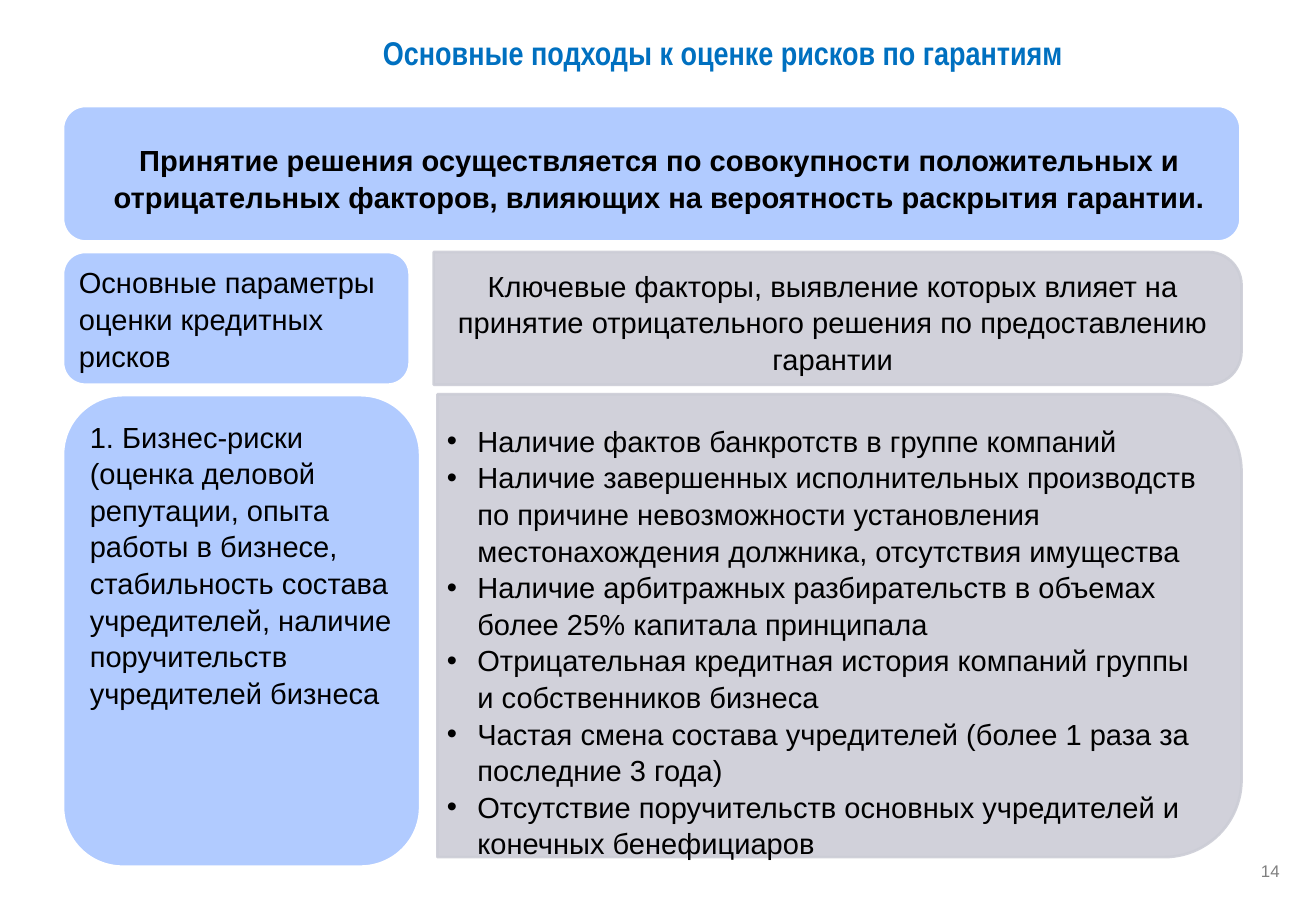
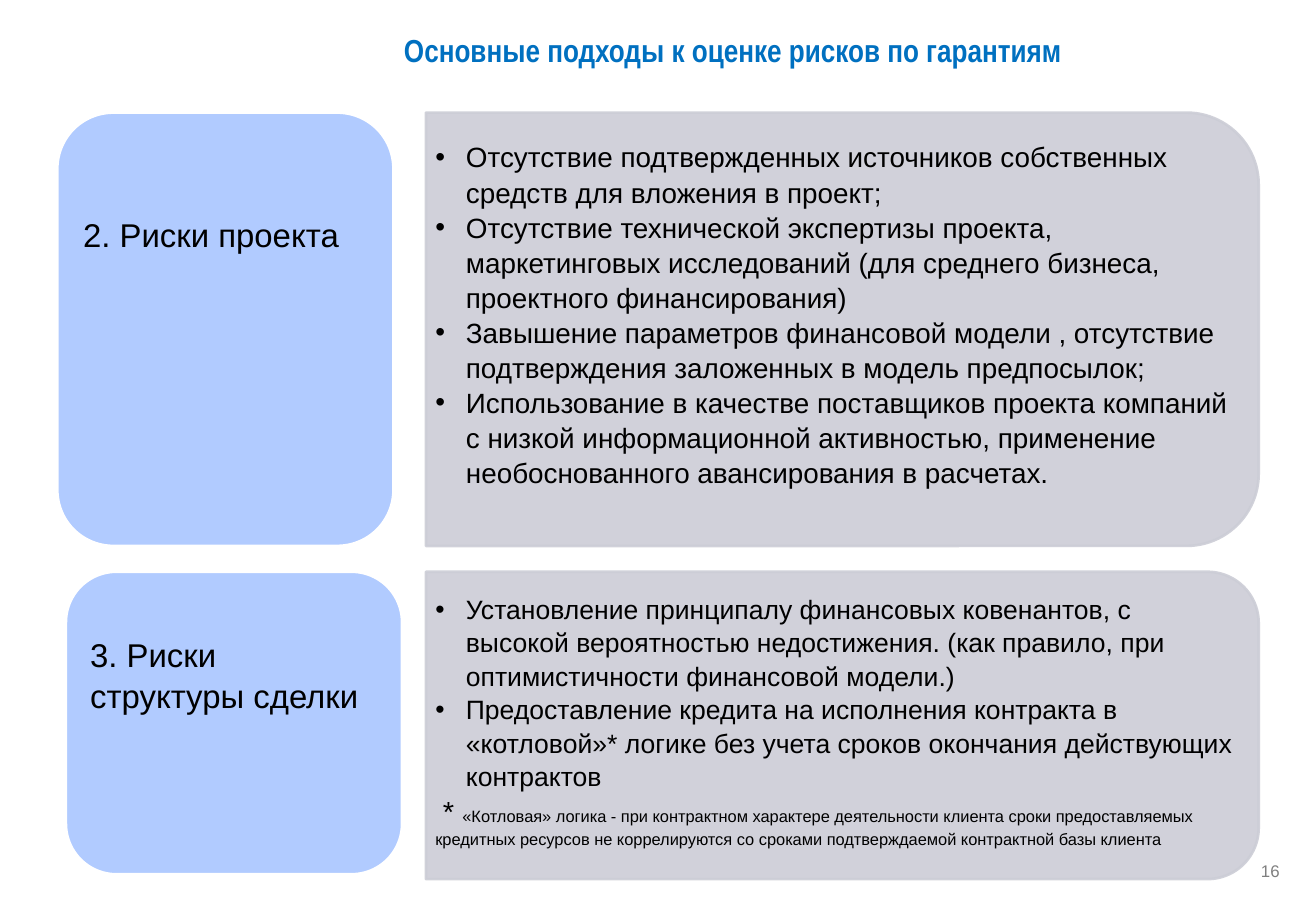
import pptx
import pptx.dml.color
import pptx.enum.shapes
import pptx.enum.text
import pptx.oxml
import pptx.oxml.ns
import pptx.util

Inches = pptx.util.Inches
Pt = pptx.util.Pt
Shapes = pptx.enum.shapes.MSO_SHAPE
Align = pptx.enum.text.PP_ALIGN
Anchor = pptx.enum.text.MSO_ANCHOR

BLUE, GREY, WHITE, BLACK = "B1CBFF", "CCCDD6", "FFFFFF", "000000"
TITLE_COLOR, NUMBER_COLOR = "0070C0", "808080"
HEADING = "Основные подходы к оценке рисков по гарантиям"


def color(value):
    return pptx.dml.color.RGBColor.from_string(value)


def element(tag, **attributes):
    node = pptx.oxml.parse_xml(f"<a:{tag} {pptx.oxml.ns.nsdecls('a')}/>")
    for name, value in attributes.items():
        node.set(name, str(value))
    return node


class Builder:
    """Holds the style of the deck and the page being filled."""

    def __init__(self):
        self.deck = pptx.Presentation()
        self.deck.slide_width = Inches(13.78)
        self.deck.slide_height = Inches(9.45)
        self.page = None

    def add_text(self, para, text, size, font="Arial", ink=BLACK, bold=False):
        span = para.add_run()
        span.text = text
        span.font.name = font
        span.font.size = Pt(size)
        span.font.bold = bold
        span.font.color.rgb = color(ink)

    def start_page(self, number, left, top, width, height, size):
        self.page = self.deck.slides.add_slide(self.deck.slide_layouts[5])
        # Title
        title = self.page.shapes.title
        title.left, title.top = Inches(left), Inches(top)
        title.width, title.height = Inches(width), Inches(height)
        frame = title.text_frame
        frame.auto_size = pptx.enum.text.MSO_AUTO_SIZE.NONE
        frame.vertical_anchor = Anchor.MIDDLE
        para = frame.paragraphs[0]
        para.alignment = Align.LEFT
        self.add_text(para, HEADING, size, "Arial Narrow", TITLE_COLOR, True)
        # Page number
        box = self.page.shapes.add_textbox(
            Inches(12.98), Inches(9.03), Inches(0.42), Inches(0.2))
        frame = box.text_frame
        frame.word_wrap = True
        frame.margin_left = frame.margin_right = 0
        frame.margin_top = frame.margin_bottom = 0
        para = frame.paragraphs[0]
        para.alignment = Align.RIGHT
        para.line_spacing = Pt(14.3)
        self.add_text(para, number, 12.7, ink=NUMBER_COLOR)

    def shape(self, kind, left, top, width, height, fill, line):
        box = self.page.shapes.add_shape(
            kind, Inches(left), Inches(top), Inches(width), Inches(height))
        box.shadow.inherit = False
        box.fill.solid()
        box.fill.fore_color.rgb = color(fill)
        box.line.color.rgb = color(line)
        box.line.width = Pt(2)
        box.text_frame.word_wrap = True
        box.text_frame.vertical_anchor = Anchor.TOP
        return box

    def paragraph(self, frame, align=Align.LEFT):
        first = frame.paragraphs[0]
        para = frame.add_paragraph() if first.runs else first
        para.alignment = align
        para.line_spacing = 1.05
        return para

    def card(self, left, top, width, height, text, size=21.9, inset=0.05):
        """Blue rounded card with text at the left."""
        box = self.shape(Shapes.ROUNDED_RECTANGLE, left, top, width, height, BLUE, WHITE)
        box.text_frame.margin_top = Inches(inset)
        self.add_text(self.paragraph(box.text_frame), text, size)

    def banner(self, left, top, width, height, text):
        """Wide blue band with bold centred text."""
        box = self.shape(Shapes.ROUNDED_RECTANGLE, left, top, width, height, BLUE, WHITE)
        frame = box.text_frame
        frame.vertical_anchor = Anchor.MIDDLE
        frame.margin_left, frame.margin_right = Inches(0.38), Inches(0.22)
        frame.margin_top = Inches(0.13)
        self.add_text(self.paragraph(frame, Align.CENTER), text, 21.9, bold=True)

    def panel(self, left, top, width, height):
        """Grey panel rounded at the right: a shape turned by 90 degrees."""
        shift = (width - height) / 2
        box = self.shape(Shapes.ROUND_2_SAME_RECTANGLE, left + shift, top - shift,
                         height, width, GREY, GREY)
        box.rotation = 90
        for node in box._element.spPr.iter(pptx.oxml.ns.qn("a:srgbClr")):
            node.append(element("alpha", val=90000))
        box.text_frame._txBody.bodyPr.set("vert", "vert270")
        return box

    def bullets(self, frame, items, size):
        for item in items:
            para = self.paragraph(frame)
            properties = para._p.get_or_add_pPr()
            properties.set("marL", str(Inches(0.32)))
            properties.set("indent", str(-Inches(0.32)))
            properties.append(element("buFont", typeface="Arial"))
            properties.append(element("buChar", char="•"))
            self.add_text(para, item, size)

    def footnote(self, frame, mark, text):
        para = self.paragraph(frame)
        para._p.get_or_add_pPr().set("indent", str(Inches(0.08)))
        self.add_text(para, mark, 21.9)
        self.add_text(para, text, 12.4)


def business_risks(build):
    build.start_page("14", 3.91, 0.28, 9.87, 0.54, 24.8)
    build.banner(0.66, 1.11, 12.33, 1.42,
                 "Принятие решения осуществляется по совокупности положительных и "
                 "отрицательных факторов, влияющих на вероятность раскрытия гарантии.")
    # Left column
    build.card(0.66, 2.64, 3.63, 1.39, "Основные параметры оценки кредитных рисков")
    build.card(0.66, 4.14, 3.74, 4.94,
               "1. Бизнес-риски (оценка деловой репутации, опыта работы в бизнесе, "
               "стабильность состава учредителей, наличие поручительств "
               "учредителей бизнеса")
    # Right column
    factors = build.panel(4.58, 4.13, 8.42, 4.85)
    build.bullets(factors.text_frame, [
        "Наличие фактов банкротств в группе компаний",
        "Наличие завершенных исполнительных производств по причине невозможности "
        "установления местонахождения должника, отсутствия имущества",
        "Наличие арбитражных разбирательств в объемах более 25% капитала принципала",
        "Отрицательная кредитная история компаний группы и собственников бизнеса",
        "Частая смена состава учредителей (более 1 раза за последние 3 года)",
        "Отсутствие поручительств основных учредителей и конечных бенефициаров",
    ], 21.9)
    header = build.panel(4.54, 2.64, 8.46, 1.39)
    header.adjustments[0] = 0.25
    build.add_text(build.paragraph(header.text_frame, Align.CENTER),
                   "Ключевые факторы, выявление которых влияет на принятие "
                   "отрицательного решения по предоставлению гарантии", 21.9)


def project_and_deal_risks(build):
    build.start_page("16", 4.13, 0.14, 9.65, 0.76, 24)
    # Project risks
    build.card(0.6, 1.18, 3.52, 4.54, "2. Риски проекта", 24.8, 0.88)
    project = build.panel(4.46, 1.18, 8.72, 4.54)
    build.bullets(project.text_frame, [
        "Отсутствие подтвержденных источников собственных средств для вложения "
        "в проект;",
        "Отсутствие технической экспертизы проекта, маркетинговых исследований "
        "(для среднего бизнеса, проектного финансирования)",
        "Завышение параметров финансовой модели , отсутствие подтверждения "
        "заложенных в модель предпосылок;",
        "Использование в качестве поставщиков проекта компаний с низкой "
        "информационной активностью, применение необоснованного авансирования "
        "в расчетах.",
    ], 21)
    # Deal structure risks
    build.card(0.69, 5.99, 3.52, 3.17, "3. Риски структуры сделки", 24.8, 0.48)
    deal = build.panel(4.46, 5.99, 8.72, 3.22)
    build.bullets(deal.text_frame, [
        "Установление принципалу финансовых ковенантов, с высокой вероятностью "
        "недостижения. (как правило, при оптимистичности финансовой модели.)",
        "Предоставление кредита на исполнения контракта в «котловой»* логике "
        "без учета сроков окончания действующих контрактов",
    ], 20)
    build.footnote(deal.text_frame, "* ",
                   "«Котловая» логика - при контрактном характере деятельности "
                   "клиента сроки предоставляемых кредитных ресурсов не "
                   "коррелируются со сроками подтверждаемой контрактной базы клиента")


def main():
    build = Builder()
    business_risks(build)
    project_and_deal_risks(build)
    build.deck.save("out.pptx")


if __name__ == "__main__":
    main()
